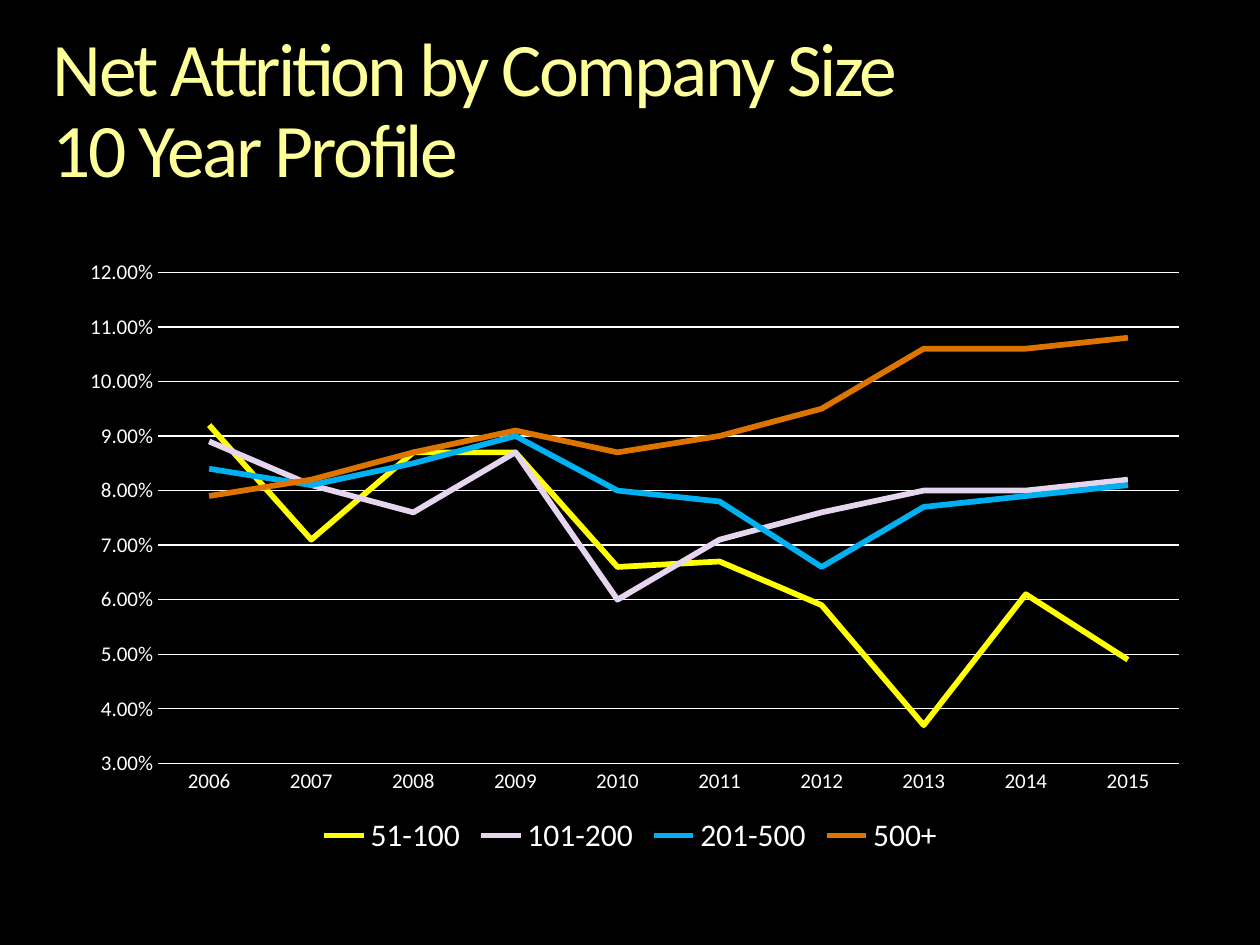
from lxml import etree
from pptx import Presentation
from pptx.chart.data import CategoryChartData
from pptx.dml.color import RGBColor
from pptx.enum.chart import XL_CHART_TYPE, XL_LEGEND_POSITION, XL_TICK_MARK
from pptx.enum.text import MSO_ANCHOR, MSO_AUTO_SIZE, PP_ALIGN
from pptx.oxml.ns import qn
from pptx.util import Emu, Pt

LINE = XL_CHART_TYPE.LINE
BOTTOM = XL_LEGEND_POSITION.BOTTOM
NO_TICK = XL_TICK_MARK.NONE
TOP = MSO_ANCHOR.TOP
NO_FIT = MSO_AUTO_SIZE.NONE
LEFT = PP_ALIGN.LEFT

BLACK = RGBColor(0x00, 0x00, 0x00)
WHITE = RGBColor(0xFF, 0xFF, 0xFF)
CREAM = RGBColor(0xFF, 0xFF, 0x99)
YELLOW = RGBColor(0xFF, 0xFF, 0x00)
LILAC = RGBColor(0xE6, 0xD5, 0xEF)
BLUE = RGBColor(0x00, 0xB0, 0xF0)
ORANGE = RGBColor(0xDE, 0x74, 0x00)

FACE = "Calibri"
SCALE = 914400 / 126
YEARS = [str(year) for year in range(2006, 2016)]
SIZES = [
    ("51-100", YELLOW,
     (0.092, 0.071, 0.087, 0.087, 0.066, 0.067, 0.059, 0.037, 0.061, 0.049)),
    ("101-200", LILAC,
     (0.089, 0.081, 0.076, 0.087, 0.06, 0.071, 0.076, 0.08, 0.08, 0.082)),
    ("201-500", BLUE,
     (0.084, 0.081, 0.085, 0.09, 0.08, 0.078, 0.066, 0.077, 0.079, 0.081)),
    ("500+", ORANGE,
     (0.079, 0.082, 0.087, 0.091, 0.087, 0.09, 0.095, 0.106, 0.106, 0.108)),
]
PLOT = {"layoutTarget": "inner", "xMode": "edge", "yMode": "edge",
        "x": 0.09, "y": 0.12, "w": 0.88, "h": 0.73}
PLOT.update(x=0.091, y=0.124, w=0.884, h=0.731)


def px(count):
    return Emu(round(count * SCALE))


def apply(item, **values):
    for name, value in values.items():
        setattr(item, name, value)


def style(font, size, color):
    apply(font, name=FACE, size=Pt(size))
    font.color.rgb = color


def stroke(line, width, color):
    line.width = Pt(width)
    line.color.rgb = color


def add_title(slide, text):
    title = slide.shapes.title
    apply(title, left=px(53), top=px(31), width=px(1155), height=px(92))
    frame = title.text_frame
    apply(frame, margin_left=0, margin_top=0, margin_right=0, margin_bottom=0,
          word_wrap=True, auto_size=NO_FIT, vertical_anchor=TOP)
    para = frame.paragraphs[0]
    para.text = text
    apply(para, alignment=LEFT, line_spacing=0.9)
    for run in para.runs:
        style(run.font, 43.2, CREAM)
        run._r.get_or_add_rPr().set("spc", "-150")


def place_plot(chart):
    area = chart._chartSpace.chart.plotArea
    for old in area.findall(qn("c:layout")):
        area.remove(old)
    layout = etree.Element(qn("c:layout"))
    manual = etree.SubElement(layout, qn("c:manualLayout"))
    for name, value in PLOT.items():
        etree.SubElement(manual, qn("c:" + name)).set("val", str(value))
    area.insert(0, layout)


def format_axes(chart):
    years, rates = chart.category_axis, chart.value_axis
    for axis in (years, rates):
        apply(axis, major_tick_mark=NO_TICK, minor_tick_mark=NO_TICK)
        style(axis.tick_labels.font, 12, WHITE)
    stroke(years.format.line, 0.75, WHITE)
    apply(rates, minimum_scale=0.03, maximum_scale=0.12, major_unit=0.01,
          has_major_gridlines=True)
    apply(rates.tick_labels, number_format="0.00%",
          number_format_is_linked=False)
    rates.format.line.fill.background()
    stroke(rates.major_gridlines.format.line, 0.75, WHITE)


def add_lines(slide):
    data = CategoryChartData(number_format="0.00%")
    data.categories = YEARS
    for name, color, rates in SIZES:
        data.add_series(name, rates)
    frame = slide.shapes.add_chart(
        LINE, px(53), px(189), px(1155), px(672), data)
    chart = frame.chart
    apply(chart, has_title=False, has_legend=True)
    style(chart.font, 10, WHITE)
    apply(chart.legend, position=BOTTOM, include_in_layout=False)
    style(chart.legend.font, 18, WHITE)
    format_axes(chart)
    place_plot(chart)
    plot = chart.plots[0]
    plot.vary_by_categories = False
    for series, (name, color, rates) in zip(plot.series, SIZES):
        series.smooth = False
        stroke(series.format.line, 3.25, color)


def main():
    deck = Presentation()
    apply(deck, slide_width=px(1260), slide_height=px(945))
    slide = deck.slides.add_slide(deck.slide_layouts[5])
    fill = slide.background.fill
    fill.solid()
    fill.fore_color.rgb = BLACK
    add_title(slide, "Net Attrition by Company Size\v10 Year Profile")
    add_lines(slide)
    deck.save("out.pptx")


if __name__ == "__main__":
    main()
